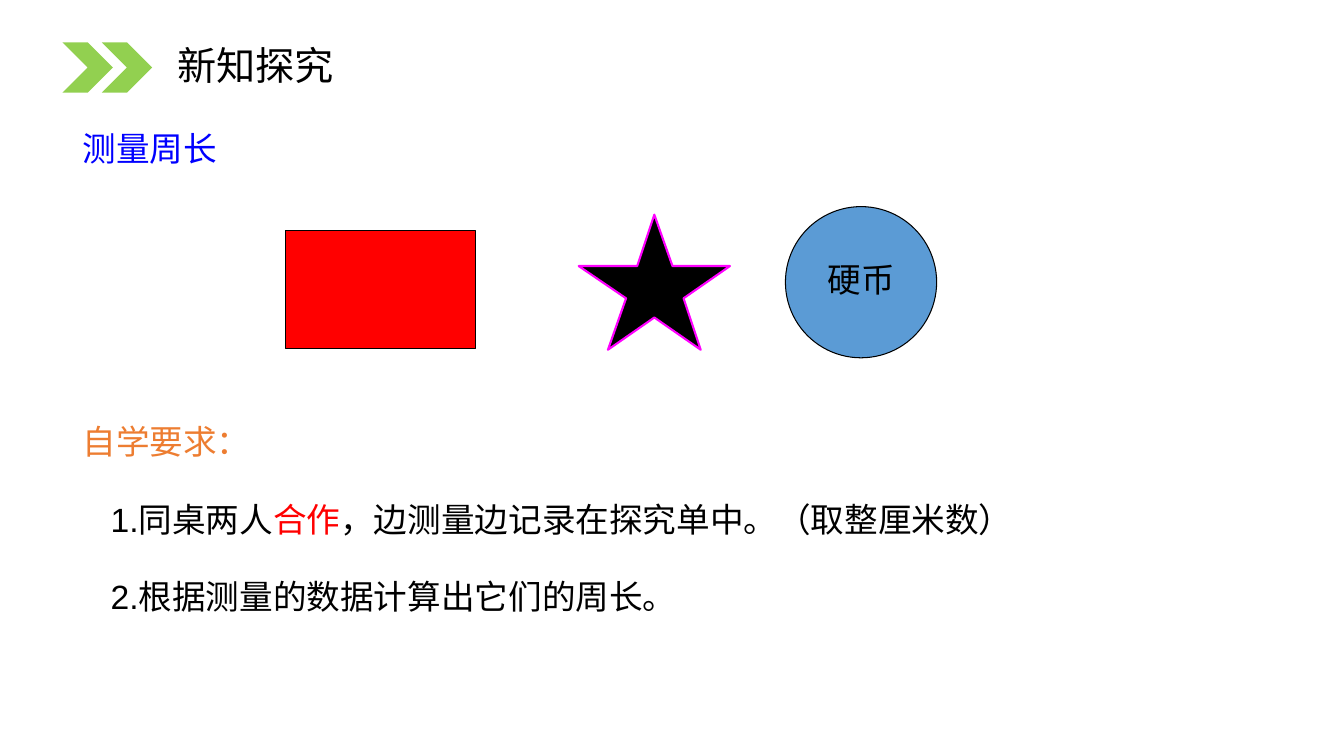
"""Build the slide on measuring perimeters."""
from dataclasses import dataclass

from pptx import Presentation
from pptx.dml.color import RGBColor
from pptx.enum.shapes import MSO_SHAPE
from pptx.enum.text import MSO_ANCHOR
from pptx.util import Inches, Pt

CHEVRON, RECTANGLE, OVAL = MSO_SHAPE.CHEVRON, MSO_SHAPE.RECTANGLE, MSO_SHAPE.OVAL
TOP, MIDDLE = MSO_ANCHOR.TOP, MSO_ANCHOR.MIDDLE

BLACK = RGBColor(0x00, 0x00, 0x00)
RED = RGBColor(0xFF, 0x00, 0x00)
BLUE = RGBColor(0x00, 0x00, 0xFF)
MAGENTA = RGBColor(0xFF, 0x00, 0xFF)
GREEN = RGBColor(0x92, 0xD0, 0x50)
ORANGE = RGBColor(0xED, 0x7D, 0x31)
COIN_BLUE = RGBColor(0x5B, 0x9B, 0xD5)

FONT = "Arial"
STAR_POINTS = [
    (5.74, 2.64), (6.32, 2.64), (6.49, 2.13), (6.67, 2.64), (7.24, 2.64),
    (6.78, 2.96), (6.95, 3.47), (6.49, 3.15), (6.03, 3.47), (6.21, 2.96),
]


@dataclass(frozen=True)
class Figure:
    kind: MSO_SHAPE
    box: tuple[float, float, float, float]
    fill: RGBColor
    line: RGBColor | None = None


@dataclass(frozen=True)
class Line:
    runs: tuple[tuple[str, RGBColor], ...]
    indent: float = 0


@dataclass(frozen=True)
class TextBlock:
    box: tuple[float, float, float, float]
    lines: tuple[Line, ...]
    size: int = 24
    line_spacing: float = 1.0
    space_before: int = 0
    anchor: MSO_ANCHOR = TOP


FIGURES = (
    Figure(CHEVRON, (0.62, 0.42, 0.5, 0.5), GREEN),
    Figure(CHEVRON, (1.01, 0.42, 0.5, 0.5), GREEN),
    Figure(RECTANGLE, (2.83, 2.29, 1.89, 1.17), RED, BLACK),
    Figure(OVAL, (7.79, 2.05, 1.5, 1.5), COIN_BLUE, BLACK),
)

TEXT_BLOCKS = (
    TextBlock((1.66, 0.44, 5.59, 0.46), (Line((("新知探究", BLACK),)),),
              size=28, line_spacing=0.9, anchor=MIDDLE),
    TextBlock((0.72, 1.22, 3.5, 0.5), (Line((("测量周长", BLUE),)),)),
    TextBlock((8.11, 2.52, 0.95, 0.5), (Line((("硬币", BLACK),)),)),
    TextBlock(
        (0.72, 3.93, 12.33, 2.26),
        (
            Line((("自学要求：", ORANGE),)),
            Line((("1.同桌两人", BLACK), ("合作", RED),
                  ("，边测量边记录在探究单中。（取整厘米数）", BLACK)), 0.28),
            Line((("2.根据测量的数据计算出它们的周长。", BLACK),), 0.28),
        ),
        line_spacing=1.5, space_before=12,
    ),
)


def paint(shape, fill: RGBColor, line: RGBColor | None, width: float) -> None:
    """Set the fill and outline of a shape and drop its shadow."""
    shape.shadow.inherit = False
    shape.fill.solid()
    shape.fill.fore_color.rgb = fill
    if line is None:
        shape.line.fill.background()
    else:
        shape.line.color.rgb = line
        shape.line.width = Pt(width)


def draw_figure(slide, figure: Figure) -> None:
    """Draw one preset shape."""
    shape = slide.shapes.add_shape(figure.kind, *map(Inches, figure.box))
    paint(shape, figure.fill, figure.line, 0.75)


def draw_star(slide) -> None:
    """Draw the five-pointed star."""
    points = [(Inches(x), Inches(y)) for x, y in STAR_POINTS]
    builder = slide.shapes.build_freeform(*points[0])
    builder.add_line_segments(points[1:], close=True)
    paint(builder.convert_to_shape(), BLACK, MAGENTA, 1.5)


def draw_text(slide, block: TextBlock) -> None:
    """Draw one text box, run by run."""
    frame = slide.shapes.add_textbox(*map(Inches, block.box)).text_frame
    frame.word_wrap = True
    frame.vertical_anchor = block.anchor
    for index, line in enumerate(block.lines):
        paragraph = frame.add_paragraph() if index else frame.paragraphs[0]
        paragraph.line_spacing = block.line_spacing
        paragraph.space_before = Pt(block.space_before)
        if line.indent:
            properties = paragraph._p.get_or_add_pPr()
            properties.set("marL", str(Inches(line.indent)))
            properties.set("indent", "0")
        for text, color in line.runs:
            run = paragraph.add_run()
            run.text = text
            run.font.name = FONT
            run.font.size = Pt(block.size)
            run.font.color.rgb = color


def main() -> None:
    """Build and save the presentation."""
    presentation = Presentation()
    presentation.slide_width = Inches(13.33)
    presentation.slide_height = Inches(7.5)
    slide = presentation.slides.add_slide(presentation.slide_layouts[6])
    for figure in FIGURES:
        draw_figure(slide, figure)
    draw_star(slide)
    for block in TEXT_BLOCKS:
        draw_text(slide, block)
    presentation.save("out.pptx")


if __name__ == "__main__":
    main()
